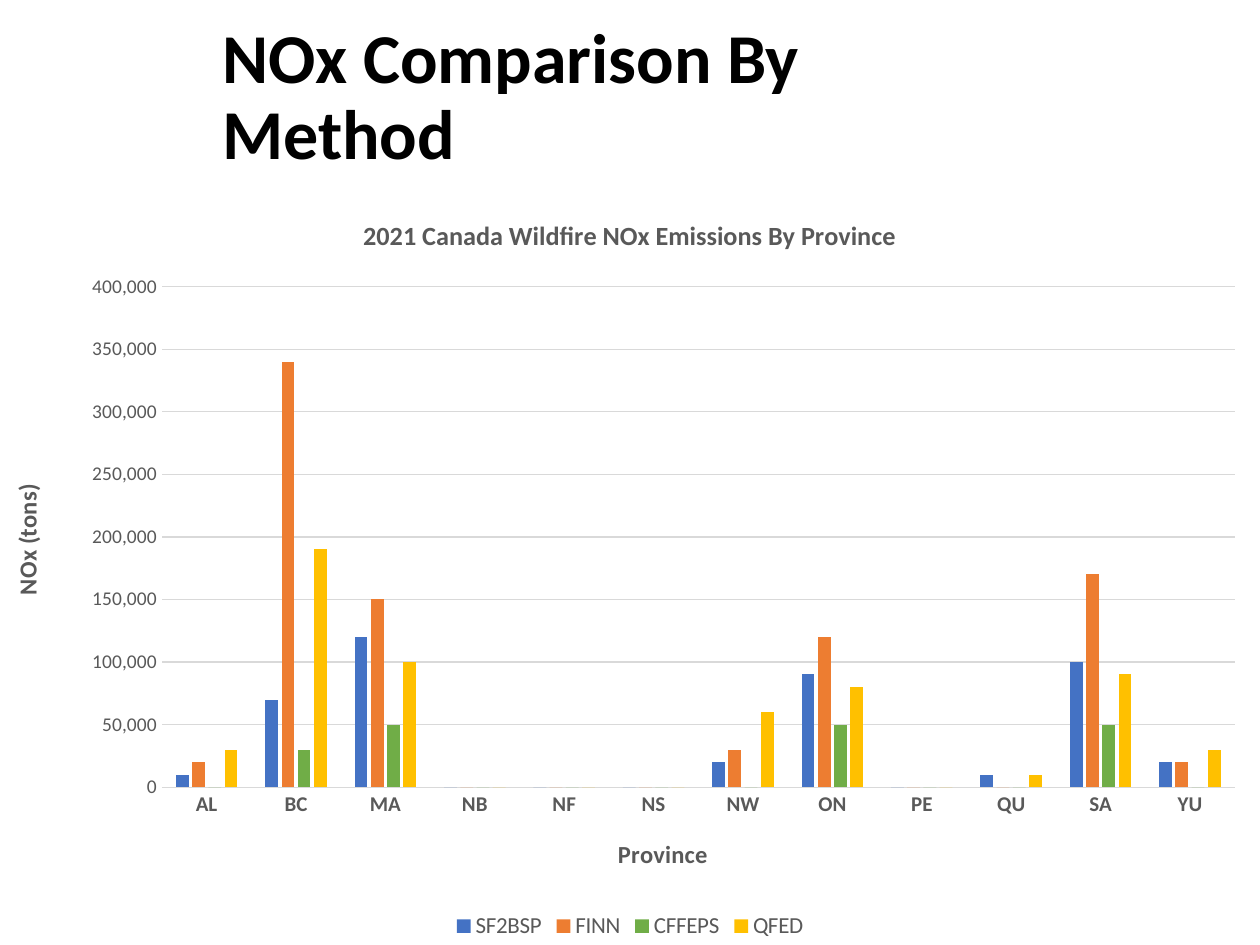
from pptx import Presentation
from pptx.chart.data import CategoryChartData
from pptx.dml.color import RGBColor
from pptx.enum.chart import XL_CHART_TYPE as ChartType
from pptx.enum.chart import XL_LEGEND_POSITION as LegendPosition
from pptx.enum.chart import XL_TICK_MARK as TickMark
from pptx.enum.text import MSO_ANCHOR as Anchor
from pptx.oxml import parse_xml
from pptx.oxml.ns import nsdecls, qn
from pptx.util import Cm, Pt

BLACK = RGBColor(0x00, 0x00, 0x00)
GREY = RGBColor(0x59, 0x59, 0x59)
LIGHT_GREY = RGBColor(0xD9, 0xD9, 0xD9)
BLUE = RGBColor(0x44, 0x72, 0xC4)
ORANGE = RGBColor(0xED, 0x7D, 0x31)
GREEN = RGBColor(0x70, 0xAD, 0x47)
YELLOW = RGBColor(0xFF, 0xC0, 0x00)

PROVINCES = ["AL", "BC", "MA", "NB", "NF", "NS",
             "NW", "ON", "PE", "QU", "SA", "YU"]
# Tens of thousands of tons of NOx, one value per province
METHODS = [
    ("SF2BSP", BLUE, [1, 7, 12, 0, 0, 0, 2, 9, 0, 1, 10, 2]),
    ("FINN", ORANGE, [2, 34, 15, 0, 0, 0, 3, 12, 0, 0, 17, 2]),
    ("CFFEPS", GREEN, [0, 3, 5, 0, 0, 0, 0, 5, 0, 0, 5, 0]),
    ("QFED", YELLOW, [3, 19, 10, 0, 0, 0, 6, 8, 0, 1, 9, 3]),
]


def set_layout(element, index, **percents):
    """Place a chart part by percents of the chart size (x, y, w, h)."""
    for old in element.findall(qn("c:layout")):
        element.remove(old)
    inner = '<c:layoutTarget val="inner"/>' if "w" in percents else ""
    modes = "".join(f'<c:{key}Mode val="edge"/>' for key in "xy")
    values = "".join(f'<c:{key} val="{value / 100:.4f}"/>'
                     for key, value in percents.items())
    element.insert(index, parse_xml(
        f'<c:layout {nsdecls("c")}><c:manualLayout>{inner}{modes}{values}'
        '</c:manualLayout></c:layout>'))


class SlideBuilder:
    font_name = "Calibri"

    def __init__(self, page):
        self.page = page

    def style(self, font, size, color=GREY, bold=False):
        font.name = self.font_name
        font.size = Pt(size)
        font.bold = bold
        font.color.rgb = color

    def heading(self, text, left, top, width, height):
        box = self.page.shapes.add_textbox(left, top, width, height)
        frame = box.text_frame
        frame.word_wrap = True
        frame.vertical_anchor = Anchor.MIDDLE
        frame.text = text
        para = frame.paragraphs[0]
        para.line_spacing = 0.9
        self.style(para.runs[0].font, 40, BLACK, bold=True)

    def chart_text(self, title, text, size, x, y):
        """Fill and place the title of a chart or of an axis."""
        title.text_frame.text = text
        span = title.text_frame.paragraphs[0].runs[0]
        self.style(span.font, size, bold=True)
        set_layout(title._element, 1, x=x, y=y)

    def column_chart(self, left, top, width, height):
        data = CategoryChartData(number_format="#,##0")
        data.categories = PROVINCES
        for name, _, amounts in METHODS:
            data.add_series(name, [amount * 10000 for amount in amounts])
        chart = self.page.shapes.add_chart(
            ChartType.COLUMN_CLUSTERED, left, top, width, height, data).chart
        self.style(chart.font, 11.1, BLACK)

        plot = chart.plots[0]
        plot.gap_width = 219
        plot.overlap = -27
        plot.vary_by_categories = False
        for series, (_, color, _) in zip(plot.series, METHODS):
            series.format.fill.solid()
            series.format.fill.fore_color.rgb = color
        set_layout(chart._chartSpace.chart.plotArea, 0,
                   x=12.85, y=12.75, w=85.15, h=66.35)

        chart.has_title = True
        self.chart_text(chart.chart_title,
                        "2021 Canada Wildfire NOx Emissions By Province",
                        15, 28.45, 2.95)
        self.category_axis(chart.category_axis)
        self.value_axis(chart.value_axis)

        chart.has_legend = True
        chart.legend.position = LegendPosition.BOTTOM
        chart.legend.include_in_layout = False
        self.style(chart.legend.font, 13.1)

    def category_axis(self, axis):
        axis.major_tick_mark = TickMark.NONE
        self.style(axis.tick_labels.font, 12, bold=True)
        self.thin_line(axis.format.line)
        self.chart_text(axis.axis_title, "Province", 14, 48.7, 85.05)

    def value_axis(self, axis):
        axis.minimum_scale = 0
        axis.maximum_scale = 400000
        axis.major_unit = 50000
        axis.major_tick_mark = TickMark.NONE
        axis.tick_labels.number_format = "#,##0"
        axis.tick_labels.number_format_is_linked = False
        self.style(axis.tick_labels.font, 11.1)
        axis.format.line.fill.background()
        self.thin_line(axis.major_gridlines.format.line)
        self.chart_text(axis.axis_title, "NOx (tons)", 14, 0.45, 38.3)

    def thin_line(self, line):
        line.color.rgb = LIGHT_GREY
        line.width = Pt(0.75)


def main():
    deck = Presentation()
    deck.slide_width = Cm(25.4)
    deck.slide_height = Cm(19.05)
    builder = SlideBuilder(deck.slides.add_slide(deck.slide_layouts[6]))
    builder.heading("NOx Comparison By Method",
                    Cm(4.23), Cm(0.15), Cm(16.93), Cm(3.69))
    builder.column_chart(Cm(0), Cm(3.84), Cm(25.4), Cm(15.21))
    deck.save("out.pptx")


if __name__ == "__main__":
    main()
